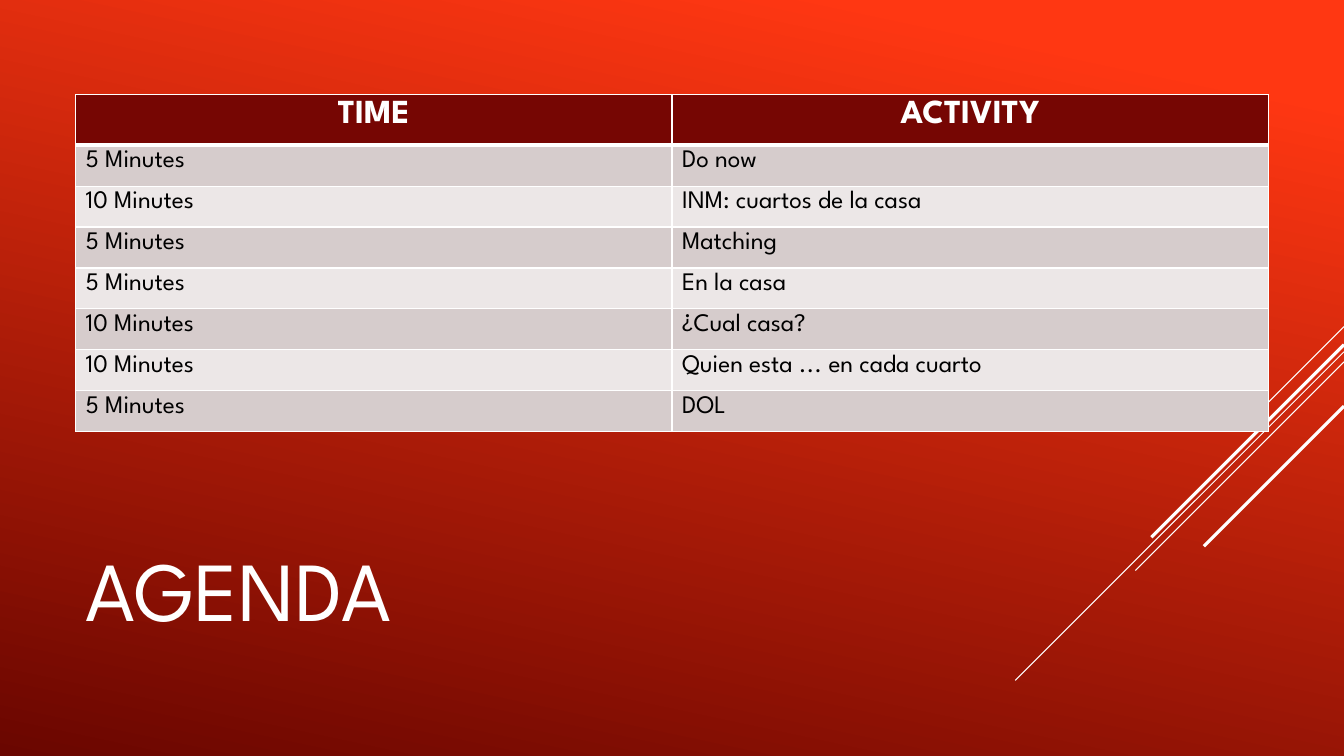
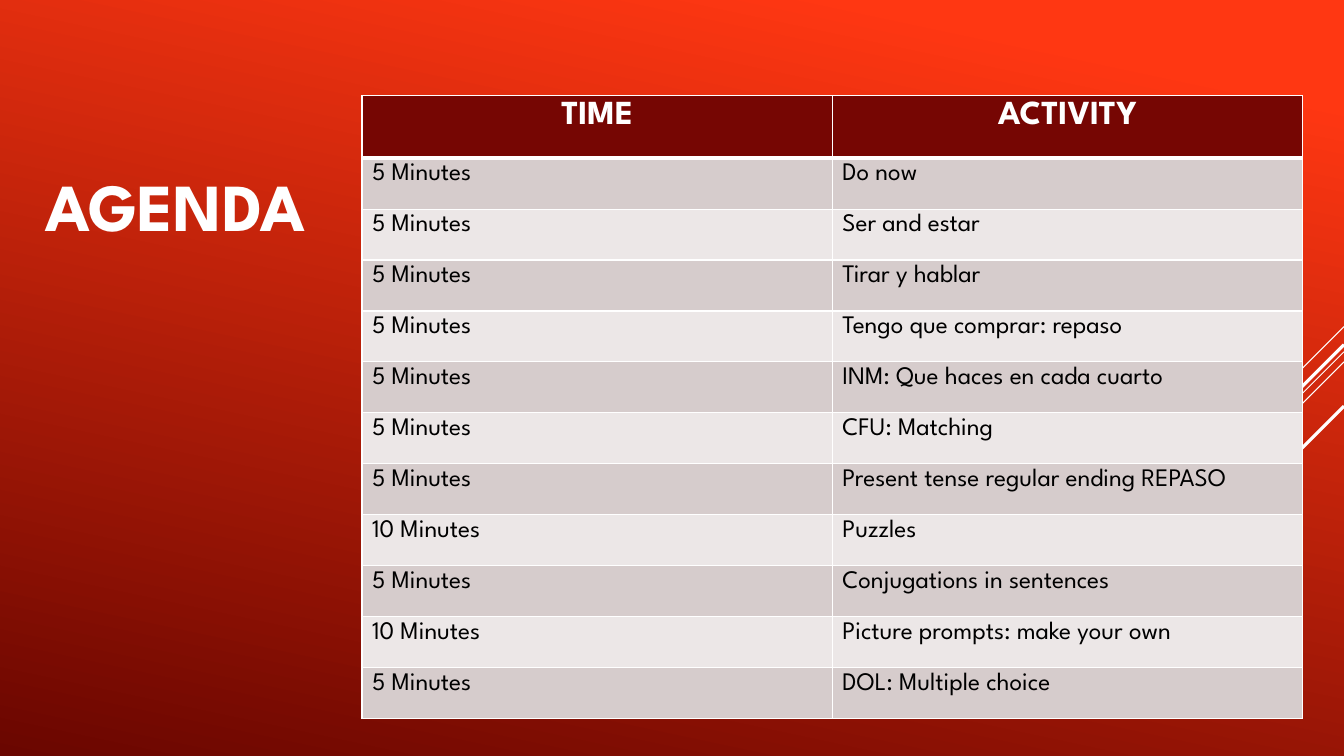
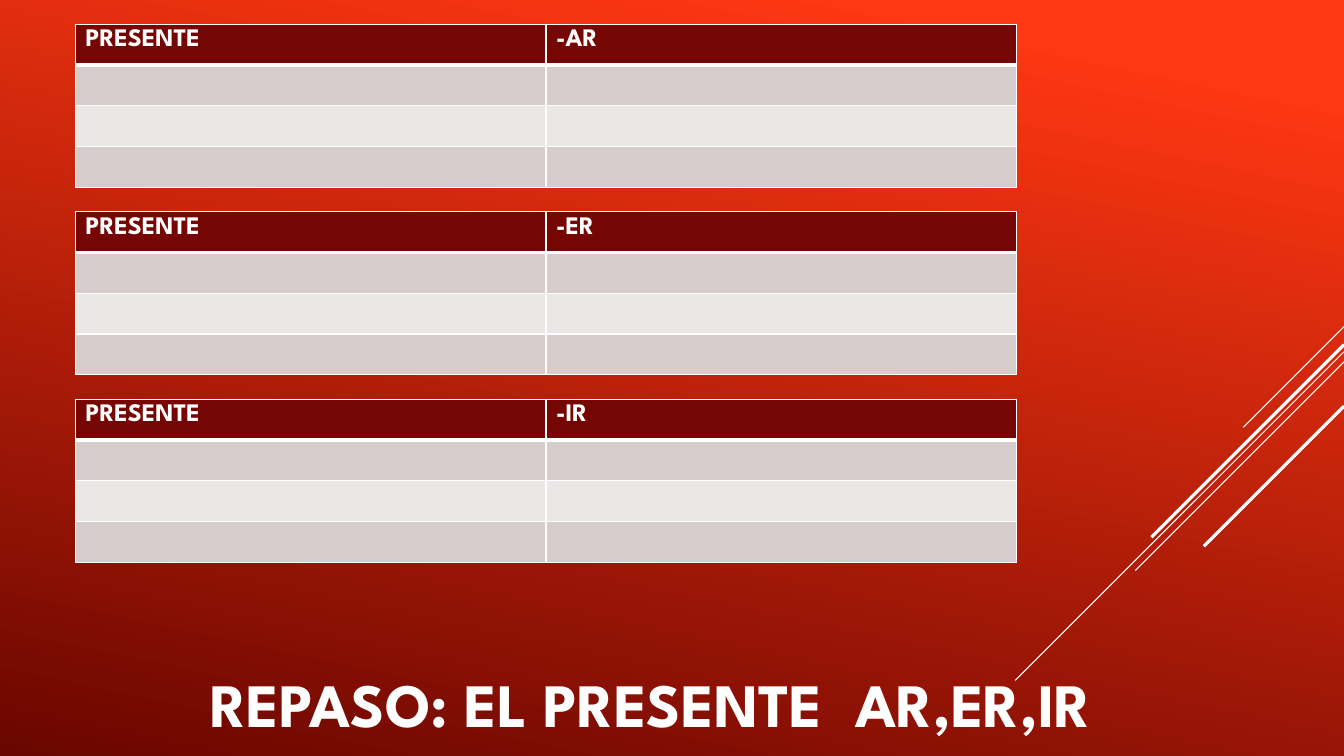
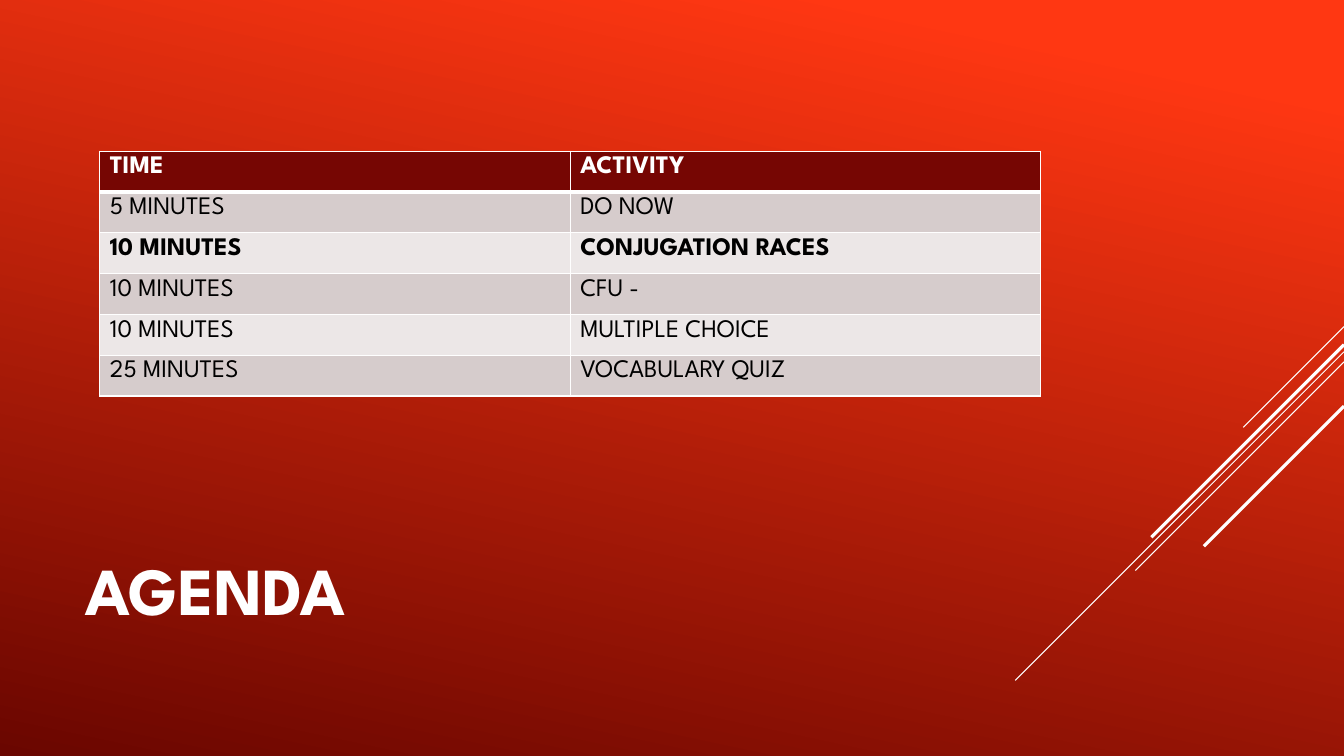
from dataclasses import dataclass

from lxml import etree
from pptx import Presentation
from pptx.dml.color import RGBColor
from pptx.enum.shapes import MSO_CONNECTOR
from pptx.enum.text import MSO_ANCHOR, PP_ALIGN
from pptx.oxml.ns import qn
from pptx.util import Inches, Pt

STRAIGHT = MSO_CONNECTOR.STRAIGHT
MIDDLE = MSO_ANCHOR.MIDDLE
LEFT, CENTER = PP_ALIGN.LEFT, PP_ALIGN.CENTER


@dataclass(frozen=True)
class Theme:
    font: str = "League Spartan"
    white: str = "FFFFFF"
    black: str = "000000"
    glow: str = "FF3712"
    deep: str = "6A0600"
    head: str = "760603"
    bands: tuple = ("D6CCCC", "ECE7E7")
    body: int = 18
    large: int = 24
    title: int = 48
    thin: float = 0.75
    thick: float = 2.25
    edge: int = 1
    rule: int = 3


THEME = Theme()
WIDTH, HEIGHT = 13.33, 7.5
RAYS = [
    (3.24, 1.0, THEME.thin),
    (3.49, 3.26, THEME.thin),
    (3.59, 2.07, THEME.thin),
    (3.42, 1.91, THEME.thick),
    (4.03, 1.39, THEME.thick),
]


def color(code):
    return RGBColor.from_string(code)


def write(frame, text, size=THEME.body, tone=THEME.white, bold=False, align=LEFT):
    para = frame.paragraphs[0]
    para.alignment = align
    run = para.add_run()
    run.text = text
    font = run.font
    font.name, font.size, font.bold = THEME.font, Pt(size), bold
    font.color.rgb = color(tone)


def paint(master):
    fill = master.background.fill
    fill.gradient()
    fill.gradient_angle = 360 - 102
    stops = zip(fill.gradient_stops, ((0.1, THEME.glow), (1, THEME.deep)))
    for stop, (place, tone) in stops:
        stop.position = place
        stop.color.rgb = color(tone)


def draw_rays(slide):
    for top, reach, weight in RAYS:
        ray = slide.shapes.add_connector(
            STRAIGHT, Inches(WIDTH), Inches(top),
            Inches(WIDTH - reach), Inches(top + reach))
        ray.line.color.rgb = color(THEME.white)
        ray.line.width = Pt(weight)
        etree.SubElement(ray._element.spPr, qn("a:effectLst"))


def add_title(slide, text, left, top, size=THEME.title, bold=True):
    box = slide.shapes.add_textbox(
        Inches(left), Inches(top), Inches(9.33), Inches(1.65))
    frame = box.text_frame
    frame.word_wrap = True
    frame.vertical_anchor = MIDDLE
    frame.margin_top = Inches(0.25)
    write(frame, text, size=size, bold=bold)


def add_edges(cell, top, bottom):
    props = cell._tc.get_or_add_tcPr()
    sides = {"L": THEME.edge, "R": THEME.edge, "T": top, "B": bottom}
    for side, weight in sides.items():
        line = etree.SubElement(props, qn("a:ln" + side), w=str(Pt(weight)))
        fill = etree.SubElement(line, qn("a:solidFill"))
        etree.SubElement(fill, qn("a:srgbClr"), val=THEME.white)


def add_grid(slide, rows, box, first=None, size=THEME.body, align=LEFT, strong=()):
    left, top, width, height = box
    count = len(rows)
    first = first or height / count
    table = slide.shapes.add_table(
        count, 2, *[Inches(part) for part in box]).table
    for col in table.columns:
        col.width = Inches(width / 2)
    for y, row in enumerate(rows):
        is_head = y == 0
        table.rows[y].height = Inches(
            first if is_head else (height - first) / (count - 1))
        for x, text in enumerate(row):
            cell = table.cell(y, x)
            add_edges(cell, THEME.rule if y == 1 else THEME.edge,
                      THEME.rule if is_head else THEME.edge)
            cell.fill.solid()
            cell.fill.fore_color.rgb = color(
                THEME.head if is_head else THEME.bands[(y - 1) % 2])
            if not text:
                continue
            if is_head:
                write(cell.text_frame, text, size=size, bold=True, align=align)
            else:
                write(cell.text_frame, text, tone=THEME.black, bold=y in strong)


def house_plan(slide):
    add_title(slide, "AGENDA", 0.75, 4.91, size=60, bold=False)
    rows = [
        ("TIME", "ACTIVITY"),
        ("5 Minutes", "Do now"),
        ("10 Minutes", "INM: cuartos de la casa"),
        ("5 Minutes", "Matching"),
        ("5 Minutes", "En la casa"),
        ("10 Minutes", "¿Cual casa?"),
        ("10 Minutes", "Quien esta ... en cada cuarto"),
        ("5 Minutes", "DOL"),
    ]
    add_grid(slide, rows, (0.75, 0.94, 11.83, 3.25),
             size=THEME.large, align=CENTER)


def verb_plan(slide):
    add_title(slide, "AGENDA", 0.35, 1.1)
    rows = [
        ("TIME", "ACTIVITY"),
        ("5 Minutes", "Do now"),
        ("5 Minutes", "Ser and estar"),
        ("5 Minutes", "Tirar y hablar"),
        ("5 Minutes", "Tengo que comprar: repaso"),
        ("5 Minutes", "INM: Que haces en cada cuarto"),
        ("5 Minutes", "CFU: Matching"),
        ("5 Minutes", "Present tense regular ending REPASO"),
        ("10 Minutes", "Puzzles"),
        ("5 Minutes", "Conjugations in sentences"),
        ("10 Minutes", "Picture prompts: make your own"),
        ("5 Minutes", "DOL: Multiple choice"),
    ]
    add_grid(slide, rows, (3.59, 0.95, 9.33, 6.18), first=0.62,
             size=THEME.large, align=CENTER)


def review(slide):
    add_title(slide, "REPASO: EL PRESENTE  AR,ER,IR", 1.99, 6.05, size=44)
    for i, ending in enumerate(("-AR", "-ER", "-IR")):
        rows = [("PRESENTE", ending)] + [("", "")] * 3
        add_grid(slide, rows, (0.75, 0.24 + 1.86 * i, 9.33, 1.62))


def quiz_plan(slide):
    add_title(slide, "AGENDA", 0.75, 4.91)
    rows = [
        ("TIME", "ACTIVITY"),
        ("5 MINUTES", "DO NOW"),
        ("10 MINUTES", "CONJUGATION RACES"),
        ("10 MINUTES", "CFU -"),
        ("10 MINUTES", "MULTIPLE CHOICE"),
        ("25 MINUTES", "VOCABULARY QUIZ"),
    ]
    add_grid(slide, rows, (0.99, 1.5, 9.33, 2.43), strong=(2,))


def main():
    deck = Presentation()
    deck.slide_width, deck.slide_height = Inches(WIDTH), Inches(HEIGHT)
    paint(deck.slide_master)
    for build in (house_plan, verb_plan, review, quiz_plan):
        slide = deck.slides.add_slide(deck.slide_layouts[6])
        draw_rays(slide)
        build(slide)
    deck.save("out.pptx")


if __name__ == "__main__":
    main()
